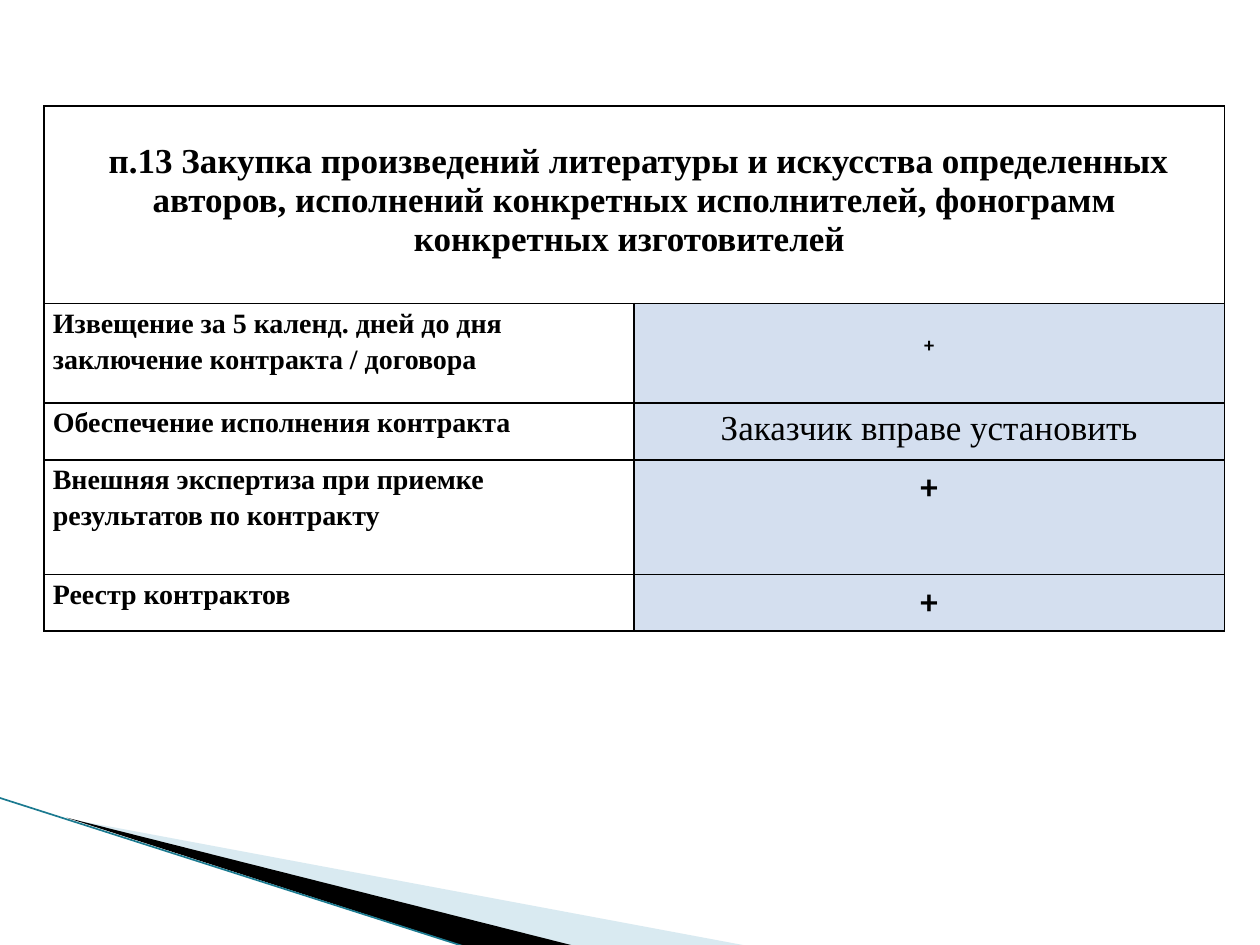
from dataclasses import dataclass

from lxml import etree
from pptx import Presentation
from pptx import util as u
from pptx.dml.color import RGBColor
from pptx.enum import shapes, text
from pptx.oxml import ns


@dataclass(frozen=True)
class Theme:
    ink: str = "000000"
    answer: str = "D4DFEF"
    pale: str = "A0CBDC"
    edge: str = "1B7A90"
    serif: str = "Times New Roman"
    sans: str = "Calibri"
    large: int = 20
    normal: int = 16


THEME = Theme()
LABEL = {"name": THEME.serif, "size": u.Pt(THEME.normal), "bold": True}
HEADING = {"name": THEME.serif, "size": u.Pt(THEME.large), "bold": True}
ANSWER = {"name": THEME.serif, "size": u.Pt(THEME.large), "bold": False}
MARK = {"name": THEME.sans, "size": u.Pt(THEME.large), "bold": True}

TITLE = (" п.13 Закупка произведений литературы и искусства определенных авторов, "
         "исполнений конкретных исполнителей, фонограмм конкретных изготовителей \t")
ROWS = [
    ("Извещение за 5 календ. дней до дня заключение контракта / договора", "+", MARK, -25),
    ("Обеспечение исполнения контракта", "Заказчик вправе установить", ANSWER, 0),
    ("Внешняя экспертиза при приемке результатов по контракту", "+", MARK, 0),
    ("Реестр контрактов", "+", MARK, 0),
]
COLUMN_WIDTHS = [4.68, 4.69]
ROW_HEIGHTS = [1.57, 0.79, 0.45, 0.91, 0.45]


def add_wedge(page, points, color, opacity=100):
    corners = [(u.Inches(x), u.Inches(y)) for x, y in points]
    builder = page.shapes.build_freeform(*corners[0], scale=1.0)
    builder.add_line_segments(corners[1:], close=True)
    wedge = builder.convert_to_shape()
    wedge.shadow.inherit = False
    wedge.fill.solid()
    wedge.fill.fore_color.rgb = RGBColor.from_string(color)
    wedge.line.fill.background()
    if opacity < 100:
        fill_color = wedge.fill._xPr.find(".//" + ns.qn("a:srgbClr"))
        etree.SubElement(fill_color, ns.qn("a:alpha"), val=str(opacity * 1000))


def add_edge(page, start, end):
    ends = [u.Inches(value) for value in (*start, *end)]
    edge = page.shapes.add_connector(shapes.MSO_CONNECTOR.STRAIGHT, *ends)
    edge.line.color.rgb = RGBColor.from_string(THEME.edge)
    edge.line.width = u.Pt(0.95)
    etree.SubElement(edge._element.spPr, ns.qn("a:effectLst"))


def set_borders(cell):
    properties = cell._tc.get_or_add_tcPr()
    for index, side in enumerate(("lnL", "lnR", "lnT", "lnB")):
        border = etree.Element(ns.qn("a:" + side), w=str(u.Pt(1)))
        fill = etree.SubElement(border, ns.qn("a:solidFill"))
        etree.SubElement(fill, ns.qn("a:srgbClr"), val=THEME.ink)
        properties.insert(index, border)


def style_cell(cell, color=None):
    margins = {"margin_left": 0.07, "margin_right": 0.07, "margin_top": 0, "margin_bottom": 0}
    for name, value in margins.items():
        setattr(cell, name, u.Inches(value))
    if color:
        cell.fill.solid()
        cell.fill.fore_color.rgb = RGBColor.from_string(color)
    else:
        cell.fill.background()
    set_borders(cell)


def write_cell(cell, words, font, align, spacing=1.15, baseline=0):
    para = cell.text_frame.paragraphs[0]
    para.alignment = align
    para.line_spacing = spacing
    span = para.add_run()
    span.text = words
    for name, value in font.items():
        setattr(span.font, name, value)
    span.font.color.rgb = RGBColor.from_string(THEME.ink)
    if baseline:
        span._r.get_or_add_rPr().set("baseline", str(baseline * 1000))


def add_requirements(page):
    frame = page.shapes.add_table(
        len(ROW_HEIGHTS), len(COLUMN_WIDTHS), u.Inches(0.35), u.Inches(0.84),
        u.Inches(sum(COLUMN_WIDTHS)), u.Inches(sum(ROW_HEIGHTS)))
    table = frame.table
    table.first_row = table.horz_banding = False
    for column, width in zip(table.columns, COLUMN_WIDTHS):
        column.width = u.Inches(width)
    for row, height in zip(table.rows, ROW_HEIGHTS):
        row.height = u.Inches(height)

    heading = table.cell(0, 0)
    heading.merge(table.cell(0, 1))
    for column in range(2):
        style_cell(table.cell(0, column))
    heading.margin_top = u.Inches(0.29)
    write_cell(heading, TITLE, HEADING, text.PP_ALIGN.CENTER, spacing=1.0)

    for index, (label, answer, font, baseline) in enumerate(ROWS, start=1):
        label_cell, answer_cell = table.cell(index, 0), table.cell(index, 1)
        style_cell(label_cell)
        style_cell(answer_cell, THEME.answer)
        write_cell(label_cell, label, LABEL, text.PP_ALIGN.LEFT)
        write_cell(answer_cell, answer, font, text.PP_ALIGN.CENTER, baseline=baseline)


def main():
    deck = Presentation()
    deck.slide_width, deck.slide_height = u.Inches(10), u.Inches(7.5)
    page = deck.slides.add_slide(deck.slide_layouts[6])
    add_wedge(page, [(0.55, 6.5), (5.95, 7.51), (4.56, 7.51)], THEME.pale, opacity=40)
    add_wedge(page, [(0.53, 6.49), (4.57, 7.51), (3.72, 7.52)], THEME.ink)
    add_edge(page, (-0.01, 6.33), (3.71, 7.52))
    add_requirements(page)
    deck.save("out.pptx")


if __name__ == "__main__":
    main()
